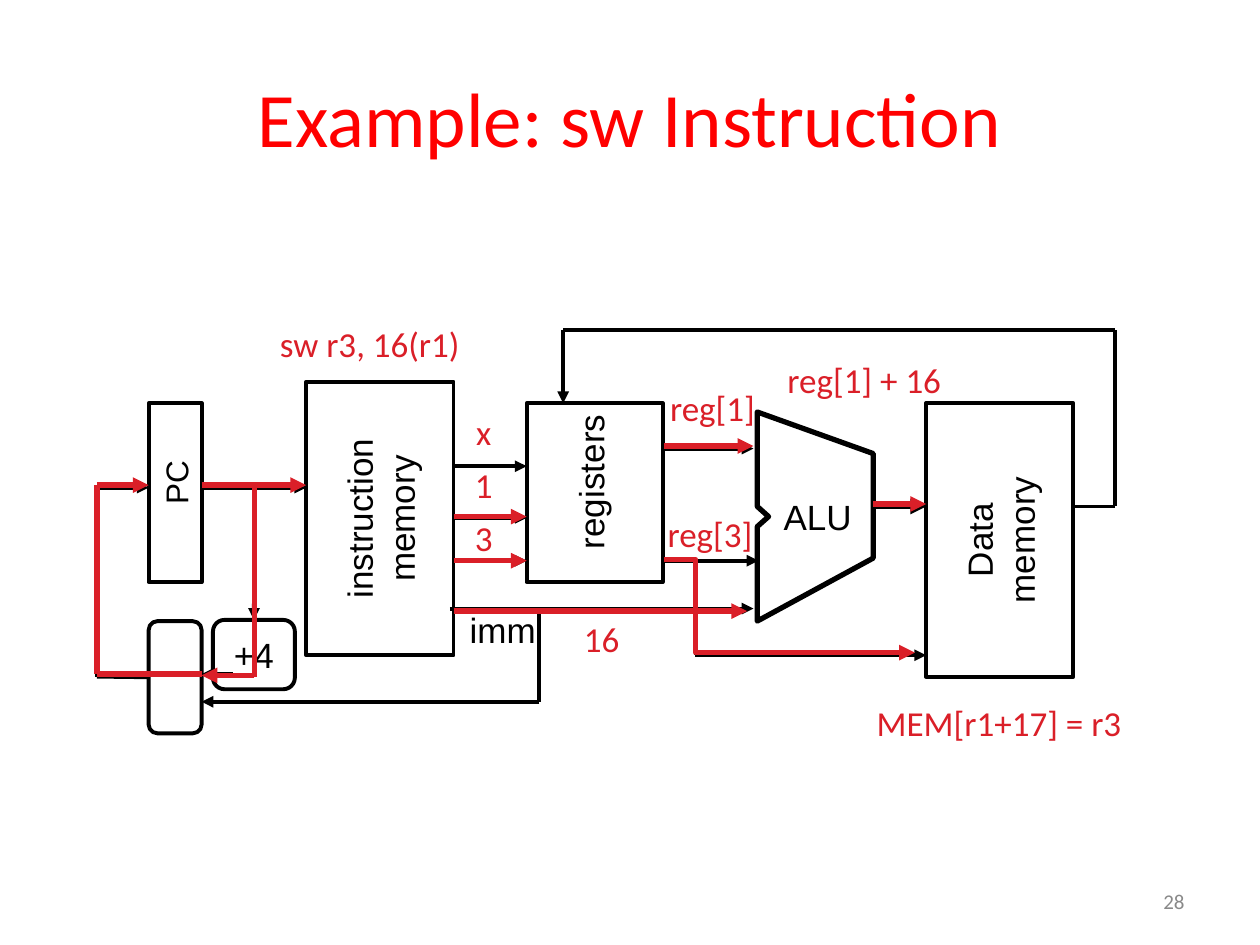
import dataclasses

import pptx
import pptx.dml.color
import pptx.enum.shapes
import pptx.enum.text
import pptx.oxml
import pptx.oxml.ns
import pptx.util
import lxml.etree

SHAPES = pptx.enum.shapes.MSO_SHAPE
ALIGN = pptx.enum.text.PP_ALIGN
ANCHOR = pptx.enum.text.MSO_ANCHOR
WIDTH, HEIGHT = pptx.util.Inches(10), pptx.util.Inches(7.5)
COLUMN, ROW = WIDTH / 100, HEIGHT / 75


@dataclasses.dataclass(frozen=True)
class Style:
    """Font, size and colour of a text run."""
    font: str
    size: float
    color: str


@dataclasses.dataclass(frozen=True)
class Pen:
    """Colour and width of a line."""
    color: str
    width: float


@dataclasses.dataclass(frozen=True)
class Theme:
    """Colours and type sizes of the slide."""
    paper: str = "FFFFFF"
    title: Style = Style("Calibri", 44, "FF0000")
    unit: Style = Style("Arial", 20, "000000")
    small_unit: Style = Style("Arial", 18, "000000")
    value: Style = Style("Calibri", 20, "DA1F28")
    number: Style = Style("Calibri", 12, "898989")
    wire: Pen = Pen("000000", 2.25)
    outline: Pen = Pen("000000", 3)
    trace: Pen = Pen("DA1F28", 3)


THEME = Theme()


@dataclasses.dataclass(frozen=True)
class Box:
    """A region of the slide, measured in grid columns and rows."""
    slide: object
    left: float
    top: float
    width: float
    height: float

    def point(self, x, y):
        """Turn a place in the box into slide lengths."""
        return round((self.left + x) * COLUMN), round((self.top + y) * ROW)

    def frame(self, x, y, width, height, upright=False):
        """Return the frame of a shape, before rotation when it is upright."""
        if upright:
            x, y = x + (width - height) / 2, y + (height - width) / 2
            width, height = height, width
        return *self.point(x, y), round(width * COLUMN), round(height * ROW)


def color(value):
    """Return an RGB colour."""
    return pptx.dml.color.RGBColor.from_string(value)


def draw_line(shape, pen, arrow=False):
    """Give a shape its line and, if asked, a closing arrowhead."""
    shape.line.color.rgb = color(pen.color)
    shape.line.width = pptx.util.Pt(pen.width)
    if arrow:
        line = shape.element.spPr.find(pptx.oxml.ns.qn("a:ln"))
        lxml.etree.SubElement(line, pptx.oxml.ns.qn("a:tailEnd"), type="triangle")


def write(shape, text, style, align=ALIGN.CENTER, anchor=ANCHOR.MIDDLE, wrap=False):
    """Write one paragraph for each line of text."""
    frame = shape.text_frame
    frame.word_wrap, frame.vertical_anchor = wrap, anchor
    for index, words in enumerate(text.split("\n")):
        paragraph = frame.add_paragraph() if index else frame.paragraphs[0]
        paragraph.alignment = align
        run = paragraph.add_run()
        run.text = words
        run.font.name, run.font.size = style.font, pptx.util.Pt(style.size)
        run.font.color.rgb = color(style.color)


def label(box, place, text, style=THEME.value, upright=False, **layout):
    """Add a text box."""
    shape = box.slide.shapes.add_textbox(*box.frame(*place, upright))
    shape.rotation = 270 if upright else 0
    write(shape, text, style, **layout)


def block(box, place, text="", kind=SHAPES.RECTANGLE, upright=False):
    """Add an outlined unit of the datapath."""
    shape = box.slide.shapes.add_shape(kind, *box.frame(*place, upright))
    shape.rotation = 270 if upright else 0
    shape.shadow.inherit = False
    shape.fill.solid()
    shape.fill.fore_color.rgb = color(THEME.paper)
    draw_line(shape, THEME.wire)
    if text:
        write(shape, text, THEME.unit)
    return shape


def wire(box, *points, pen=THEME.wire, arrow=True, start=None, end=None):
    """Join points with straight connectors."""
    last = len(points) - 2
    for index, (tail, head) in enumerate(zip(points, points[1:])):
        connector = box.slide.shapes.add_connector(
            pptx.enum.shapes.MSO_CONNECTOR.STRAIGHT, *box.point(*tail), *box.point(*head))
        if start and index == 0:
            connector.begin_connect(*start)
        if end and index == last:
            connector.end_connect(*end)
        draw_line(connector, pen, arrow and index == last)
        lxml.etree.SubElement(connector.element.spPr, pptx.oxml.ns.qn("a:effectLst"))


def outline(box, points, pen, close, arrow=False):
    """Add an unfilled freeform through the points."""
    first, *rest = [box.point(*point) for point in points]
    builder = box.slide.shapes.build_freeform(*first)
    builder.add_line_segments(rest, close=close)
    shape = builder.convert_to_shape()
    shape.shadow.inherit = False
    shape.fill.background()
    draw_line(shape, pen, arrow)


def fetch(box):
    """Draw the program counter, its adder and the instruction memory."""
    block(box, (4.8, 8, 4.2, 14.2))
    block(box, (17.3, 6.3, 11.7, 21.7), "instruction\nmemory", upright=True)
    adder = block(box, (9.9, 25.2, 6.5, 5.5), "+4", SHAPES.ROUNDED_RECTANGLE)
    selector = block(box, (4.8, 25.3, 4.2, 8.9), kind=SHAPES.ROUNDED_RECTANGLE)
    wire(box, (9, 14.7), (17.3, 14.7))
    wire(box, (13.2, 14.7), (13.2, 25.2), end=(adder, 0))
    wire(box, (11.5, 29.5), (9, 29.5))
    wire(box, (4.8, 29.7), (0.7, 29.7), (0.7, 14.7), (4.8, 14.7), start=(selector, 1))


def decode(box):
    """Draw the registers with their inputs and the immediate."""
    block(box, (6.8, 8, 10.8, 14.2))
    label(box, (9.7, 7.9, 4.3, 12.7), "registers", THEME.unit, upright=True)
    for row in (13, 17.1, 20.5):
        wire(box, (1, row), (6.8, row))
    wire(box, (0.7, 24.3), (24.8, 24.3))
    wire(box, (7.8, 24.3), (7.8, 31.7), (-19, 31.7))
    label(box, (0.5, 23.8, 8.8, 4.3), "imm", THEME.unit)


def execute(box):
    """Draw the arithmetic unit and the wires around it."""
    outline(box, [(8.1, 8.7), (17.3, 12), (17.3, 20.3), (8.1, 25.3),
                  (8.1, 17.8), (9, 17), (8.1, 16.2)], THEME.outline, True)
    wire(box, (17.3, 16.2), (21.5, 16.2), pen=THEME.outline)
    label(box, (7.7, 14.8, 10.4, 5.2), "ALU", THEME.unit, anchor=ANCHOR.TOP)
    wire(box, (0.7, 20.5), (8.2, 20.5))
    wire(box, (0.7, 11.6), (7.8, 11.6))
    wire(box, (3.2, 20.5), (3.2, 23.8), arrow=False)
    wire(box, (3.2, 24.7), (3.2, 28), (21.5, 28))


def memory(box):
    """Draw the data memory and its way back to the registers."""
    block(box, (0.5, 8, 11.7, 21.7), "Data\nmemory", upright=True)
    wire(box, (12.2, 16.2), (15.5, 16.2), (15.5, 2.2), (-28.3, 2.2), (-28.3, 8))


def trace_fetch(box):
    """Mark the fetch of the instruction and the next address."""
    wire(box, (9, 14.5), (17.3, 14.5), pen=THEME.trace)
    wire(box, (13.2, 14.7), (13.2, 29.7), pen=THEME.trace, arrow=False)
    wire(box, (13.2, 29.6), (9, 29.6), pen=THEME.trace)
    wire(box, (9, 29.5), (0.7, 29.5), (0.7, 14.5), (4.8, 14.5), pen=THEME.trace)
    label(box, (4.95, 11.55, 4, 5.5), "PC", THEME.small_unit, upright=True)
    label(box, (13.8, 1.1, 17.1, 4.4), "sw r3, 16(r1)")


def trace_decode(box):
    """Mark the register numbers and the immediate."""
    for row, text in ((8.1, "x"), (12.3, "1"), (16.5, "3")):
        label(box, (1.6, row, 3.6, 4.3), text)
    for row, end in ((17, 6.8), (20.5, 6.8), (24.5, 24.3)):
        wire(box, (1, row), (end, row), pen=THEME.trace)
    label(box, (10.3, 24.5, 4.9, 4.4), "16")


def trace_execute(box):
    """Mark the register values, the sum and the stored value."""
    wire(box, (0.7, 11.4), (7.8, 11.4), pen=THEME.trace)
    wire(box, (17.3, 16), (21.5, 16), pen=THEME.trace)
    outline(box, [(0.7, 20.4), (3.2, 20.4), (3.2, 27.8), (20.6, 27.8)],
            THEME.trace, False, True)
    label(box, (0, 6.2, 9.1, 4.3), "reg[1]")
    label(box, (-0.2, 16.2, 9.1, 4.3), "reg[3]")
    label(box, (8.8, 3.5, 15.6, 5.2), "reg[1] + 16")


def trace_memory(box):
    """Mark the word written to memory."""
    label(box, (-6.7, 30.7, 26, 5.2), "MEM[r1+17] = r3")


def heading(box):
    """Write the title and the slide number."""
    label(box, (5, 3, 90, 12.5), "Example: sw Instruction", THEME.title, wrap=True)
    label(box, (71.7, 69.5, 23.3, 4), "28", THEME.number, align=ALIGN.RIGHT, wrap=True)


def main():
    """Build the slide and save it."""
    presentation = pptx.Presentation()
    presentation.slide_width, presentation.slide_height = WIDTH, HEIGHT
    slide = presentation.slides.add_slide(presentation.slide_layouts[6])
    stages = [Box(slide, left, 24, width, 36)
              for left, width in ((7, 28), (35, 17), (52, 21), (73, 20))]
    for drawings in ((fetch, decode, execute, memory),
                     (trace_fetch, trace_decode, trace_execute, trace_memory)):
        for draw, box in zip(drawings, stages):
            draw(box)
    heading(Box(slide, 0, 0, 100, 75))
    presentation.save("out.pptx")


if __name__ == "__main__":
    main()
